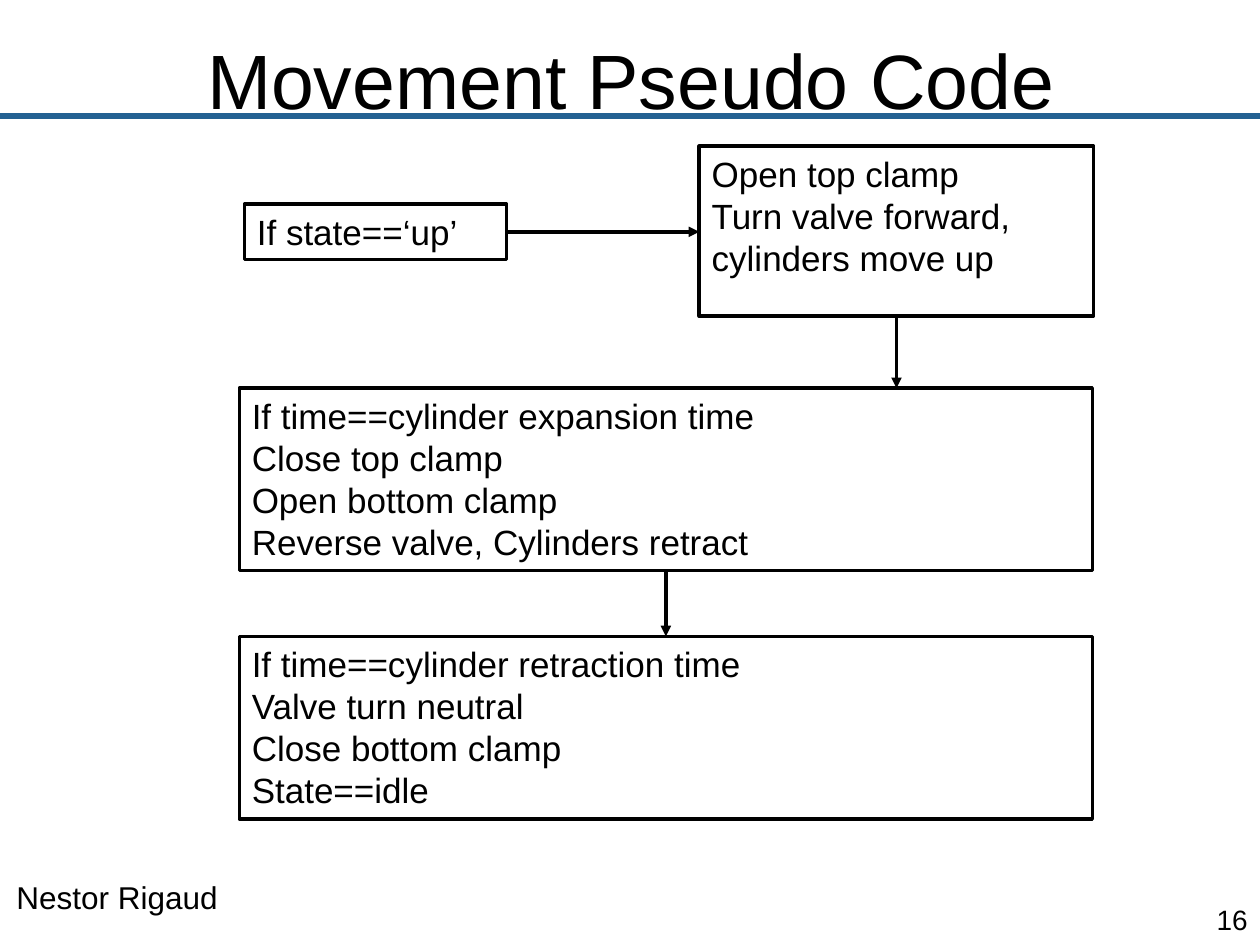
from lxml.etree import SubElement
from pptx import Presentation
from pptx.dml.color import RGBColor
from pptx.enum.shapes import MSO_CONNECTOR as CONN, MSO_SHAPE as SHAPE
from pptx.enum.text import MSO_ANCHOR as ANCHOR, PP_ALIGN as ALIGN
from pptx.oxml.ns import qn
from pptx.util import Inches, Pt

FONT, BLACK, WHITE, BLUE = "Arial", "000000", "FFFFFF", "236192"

# Content: flowchart steps as (left, top, width, height), lines
STEPS = [
    ((1.94, 1.62, 2.08, 0.44), ["If state==‘up’"]),
    ((5.55, 1.16, 3.13, 1.35),
     ["Open top clamp", "Turn valve forward, cylinders move up"]),
    ((1.9, 3.08, 6.77, 1.45),
     ["If time==cylinder expansion time", "Close top clamp",
      "Open bottom clamp", "Reverse valve, Cylinders retract"]),
    ((1.9, 5.05, 6.77, 1.45),
     ["If time==cylinder retraction time", "Valve turn neutral",
      "Close bottom clamp", "State==idle"]),
]
# Labels: box, text, size, alignment, anchor, top inset
LABELS = [
    ((0.51, 0.08, 9, 0.67), "Movement Pseudo Code", 44, ALIGN.CENTER, ANCHOR.TOP, 0.18),
    ((9.5, 7.1, 0.5, 0.4), "16", 16, ALIGN.RIGHT, ANCHOR.MIDDLE, 0.05),
    ((0, 6.92, 1.86, 0.4), "Nestor Rigaud", 18, ALIGN.CENTER, ANCHOR.TOP, 0.05),
]


def rgb(value):
    return RGBColor.from_string(value)


def write(sp, lines, size, align=ALIGN.LEFT, anchor=ANCHOR.TOP, top=0.05):
    tf = sp.text_frame
    tf.word_wrap = True
    tf.vertical_anchor = anchor
    tf.margin_top = Inches(top)
    tf.text = "\n".join(lines)
    for p in tf.paragraphs:
        p.alignment = align
        p.font.name, p.font.size = FONT, Pt(size)
        p.font.color.rgb = rgb(BLACK)


def add_line(x1, y1, x2, y2, color=BLACK, width=2, arrow=True):
    line = s.shapes.add_connector(CONN.STRAIGHT, *map(Inches, (x1, y1, x2, y2)))
    line.line.color.rgb, line.line.width = rgb(color), Pt(width)
    if arrow:
        SubElement(line.line._get_or_add_ln(), qn("a:tailEnd"), type="triangle")
    SubElement(line._element.spPr, qn("a:effectLst"))


prs = Presentation()
prs.slide_width, prs.slide_height = Inches(10), Inches(7.5)
s = prs.slides.add_slide(prs.slide_layouts[6])

# Rule, title and footer
add_line(0, 0.92, 10, 0.92, BLUE, 3.5, arrow=False)
for box, text, *style in LABELS:
    write(s.shapes.add_textbox(*map(Inches, box)), [text], *style)

# Step boxes
for box, lines in STEPS:
    sp = s.shapes.add_shape(SHAPE.RECTANGLE, *map(Inches, box))
    sp.shadow.inherit = False
    sp.fill.solid()
    sp.fill.fore_color.rgb = rgb(WHITE)
    sp.line.color.rgb, sp.line.width = rgb(BLACK), Pt(2)
    write(sp, lines, 20)

# Arrows: across from the test to the first action, then down step by step
start, *column = [box for box, _ in STEPS]
y = start[1] + start[3] / 2
add_line(start[0] + start[2], y, column[0][0], y)
for (x, top, w, h), below in zip(column, column[1:]):
    add_line(x + w / 2, top + h, x + w / 2, below[1])

prs.save("out.pptx")
